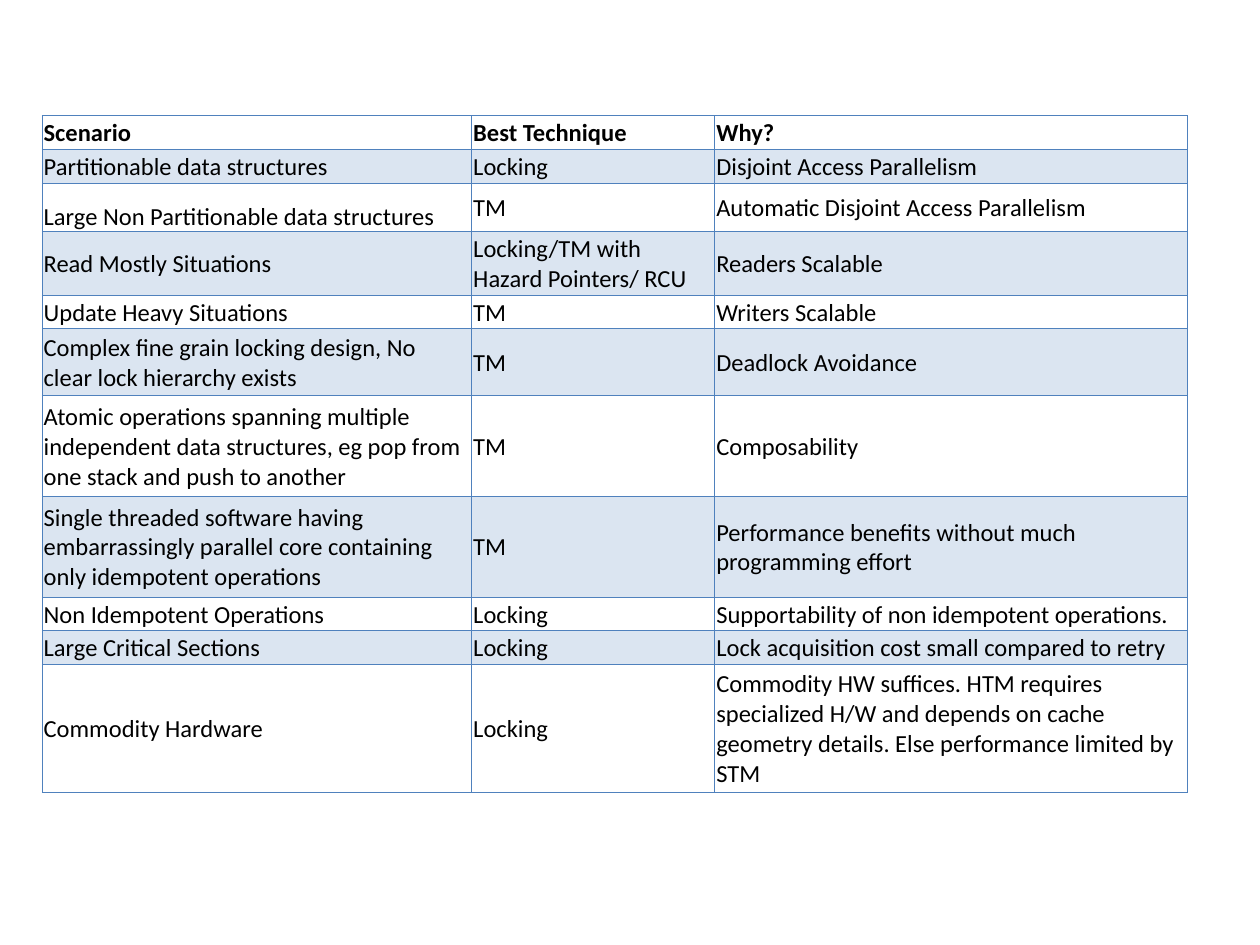
"""Build a slide with a table matching concurrency scenarios to the best technique."""
from dataclasses import dataclass

from lxml.etree import SubElement
from pptx import Presentation
from pptx.dml.color import RGBColor
from pptx.enum.text import MSO_ANCHOR as Anchor
from pptx.enum.text import PP_ALIGN as Align
from pptx.oxml.ns import qn
from pptx.table import _Cell as Cell
from pptx.util import Cm, Pt

BLACK = RGBColor(0x00, 0x00, 0x00)
BORDER_BLUE = RGBColor(0x4F, 0x81, 0xBD)
BAND_BLUE = RGBColor(0xDB, 0xE5, 0xF1)
FONT_NAME = "Calibri"
FONT_SIZE = Pt(14)
THIN, THICK = Pt(0.5), Pt(1)
COLUMN_WIDTHS = (8.66, 4.9, 9.53)
LINE_HEIGHT = 0.68


@dataclass(frozen=True)
class Row:
    scenario: str
    technique: str
    reason: str
    height: float = LINE_HEIGHT
    scenario_anchor: Anchor = Anchor.MIDDLE


ROWS = (
    Row("Scenario", "Best Technique", "Why?"),
    Row("Partitionable data structures", "Locking", "Disjoint Access Parallelism"),
    Row("Large Non Partitionable data structures", "TM",
        "Automatic Disjoint Access Parallelism", 0.98, Anchor.BOTTOM),
    Row("Read Mostly Situations", "Locking/TM with Hazard Pointers/ RCU",
        "Readers Scalable", 1.28),
    Row("Update Heavy Situations", "TM", "Writers Scalable"),
    Row("Complex fine grain locking design, No clear lock hierarchy exists", "TM",
        "Deadlock Avoidance", 1.35),
    Row("Atomic operations spanning multiple independent data structures, "
        "eg pop from one stack and push to another", "TM", "Composability", 2.03),
    Row("Single threaded software having embarrassingly parallel core containing "
        "only idempotent operations", "TM",
        "Performance benefits without much programming effort", 2.03),
    Row("Non Idempotent Operations", "Locking",
        "Supportability of non idempotent operations."),
    Row("Large Critical Sections", "Locking",
        "Lock acquisition cost small compared to retry"),
    Row("Commodity Hardware", "Locking",
        "Commodity HW suffices. HTM requires specialized H/W and depends on cache "
        "geometry details. Else performance limited by STM", 2.57),
)


def draw_borders(cell: Cell, top: int, bottom: int) -> None:
    """Outline the cell with thin sides and the given top and bottom widths."""
    properties = cell._tc.get_or_add_tcPr()
    for side, width in (("L", THIN), ("R", THIN), ("T", top), ("B", bottom)):
        line = SubElement(properties, qn(f"a:ln{side}"), w=str(int(width)))
        fill = SubElement(line, qn("a:solidFill"))
        SubElement(fill, qn("a:srgbClr"), val=str(BORDER_BLUE))


def write_cell(cell: Cell, text: str, anchor: Anchor, bold: bool) -> None:
    """Write one left-aligned run with tight margins."""
    cell.margin_left = cell.margin_right = cell.margin_top = Cm(0.03)
    cell.margin_bottom = 0
    cell.vertical_anchor = anchor
    para = cell.text_frame.paragraphs[0]
    para.alignment = Align.LEFT
    span = para.add_run()
    span.text = text
    span.font.name = FONT_NAME
    span.font.size = FONT_SIZE
    span.font.bold = bold
    span.font.color.rgb = BLACK


def draw_table(page) -> None:
    """Add the table with a bold header and every second row shaded."""
    table = page.shapes.add_table(
        len(ROWS), len(COLUMN_WIDTHS), Cm(0.85), Cm(2.33),
        Cm(sum(COLUMN_WIDTHS)), Cm(sum(row.height for row in ROWS))).table
    table.first_row = table.horz_banding = False
    for column, width in zip(table.columns, COLUMN_WIDTHS):
        column.width = Cm(width)
    for index, row in enumerate(ROWS):
        table.rows[index].height = Cm(row.height)
        entries = ((row.scenario, row.scenario_anchor),
                   (row.technique, Anchor.MIDDLE), (row.reason, Anchor.MIDDLE))
        for position, (text, anchor) in enumerate(entries):
            cell = table.cell(index, position)
            write_cell(cell, text, anchor, bold=index == 0)
            draw_borders(cell, THICK if index == 1 else THIN,
                         THICK if index == 0 else THIN)
            if index % 2:
                cell.fill.solid()
                cell.fill.fore_color.rgb = BAND_BLUE
            else:
                cell.fill.background()


def main() -> None:
    """Create the deck and save it."""
    deck = Presentation()
    deck.slide_width, deck.slide_height = Cm(25.4), Cm(19.05)
    draw_table(deck.slides.add_slide(deck.slide_layouts[6]))
    deck.save("out.pptx")


if __name__ == "__main__":
    main()
